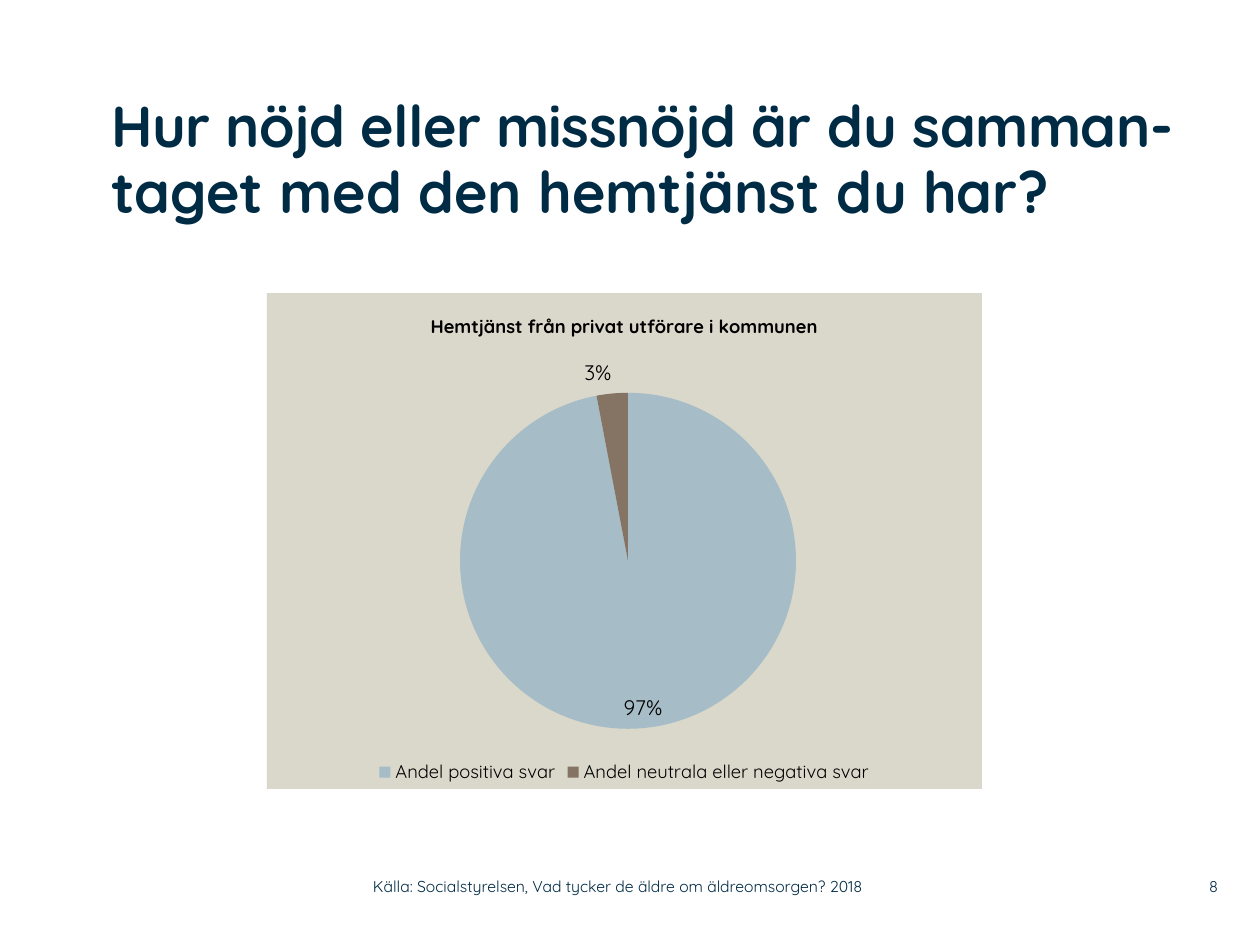
"""Build a slide with a pie chart of satisfaction with home care."""
from lxml.etree import SubElement
from pptx import Presentation
from pptx.chart.data import CategoryChartData
from pptx.dml.color import RGBColor
from pptx.enum.chart import XL_CHART_TYPE as ChartType
from pptx.enum.chart import XL_LABEL_POSITION as LabelPosition
from pptx.enum.chart import XL_LEGEND_POSITION as LegendPosition
from pptx.enum.text import MSO_ANCHOR as Anchor
from pptx.enum.text import PP_ALIGN as Align
from pptx.oxml.ns import qn
from pptx.util import Emu, Pt

COLORS = {"navy": "002B45", "black": "000000", "sand": "DAD7CB",
          "positive": "A6BCC6", "negative": "857363"}
FONT = "Quicksand"
SCALE = 914400 / 126


def px(*lengths):
    return [Emu(round(length * SCALE)) for length in lengths]


def style(font, size, color, bold=False):
    font.name = FONT
    font.size = Pt(size)
    font.bold = bold
    font.color.rgb = RGBColor.from_string(COLORS[color])


deck = Presentation()
deck.slide_width, deck.slide_height = px(1260, 945)
page = deck.slides.add_slide(deck.slide_layouts[5])

title = page.shapes.title
title.left, title.top, title.width, title.height = px(111, 95, 1126, 179)
frame = title.text_frame
frame.word_wrap = True
frame.vertical_anchor = Anchor.TOP
frame.margin_left = frame.margin_top = frame.margin_right = frame.margin_bottom = 0
para = frame.paragraphs[0]
para.alignment = Align.LEFT
para.line_spacing = 0.95
for text, spacing in [("Hur nöjd eller missnöjd är du samman-", -30),
                      ("taget med den hemtjänst du har?", 0)]:
    span = para.add_run()
    span.text = text
    style(span.font, 33, "navy", bold=True)
    span.font._element.set("spc", str(spacing))

chart_data = CategoryChartData()
chart_data.categories = ["Andel positiva svar", "Andel neutrala eller negativa svar"]
chart_data.add_series("Andel svar", [97, 3])
chart = page.shapes.add_chart(ChartType.PIE, *px(267, 293, 715, 496), chart_data).chart
style(chart.font, 18, "black")

chart.has_title = True
span = chart.chart_title.text_frame.paragraphs[0].add_run()
span.text = "Hemtjänst från privat utförare i kommunen"
style(span.font, 10.5, "black", bold=True)

chart.has_legend = True
chart.legend.position = LegendPosition.BOTTOM
chart.legend.include_in_layout = False
style(chart.legend.font, 10.5, "black")

plot = chart.plots[0]
plot.vary_by_categories = True
for index, color in enumerate(["positive", "negative"]):
    fill = plot.series[0].points[index].format.fill
    fill.solid()
    fill.fore_color.rgb = RGBColor.from_string(COLORS[color])
plot.has_data_labels = True
labels = plot.data_labels
labels.show_percentage = True
labels.show_value = False
labels.number_format = "0%"
labels.number_format_is_linked = False
labels.position = LabelPosition.BEST_FIT
style(labels.font, 12, "black")

plot_area = chart._chartSpace.chart.plotArea
layout = plot_area.find(qn("c:layout"))
if layout is None:
    layout = SubElement(plot_area, qn("c:layout"))
    plot_area.insert(0, layout)
manual = SubElement(layout, qn("c:manualLayout"))
for tag, value in [("layoutTarget", "inner"), ("xMode", "edge"), ("yMode", "edge"),
                   ("x", 0.27), ("y", 0.2), ("w", 0.47), ("h", 0.68)]:
    SubElement(manual, qn(f"c:{tag}")).set("val", str(value))

chart_fill = SubElement(chart._chartSpace, qn("c:spPr"))
solid = SubElement(chart_fill, qn("a:solidFill"))
SubElement(solid, qn("a:srgbClr")).set("val", COLORS["sand"])
SubElement(SubElement(chart_fill, qn("a:ln")), qn("a:noFill"))
chart._chartSpace.chart.addnext(chart_fill)

for text, left, width, alignment in [
        ("Källa: Socialstyrelsen, Vad tycker de äldre om äldreomsorgen? 2018",
         373, 558, Align.LEFT),
        ("8", 1159, 59, Align.RIGHT)]:
    box = page.shapes.add_textbox(*px(left, 868, width, 37))
    frame = box.text_frame
    frame.word_wrap = True
    frame.vertical_anchor = Anchor.MIDDLE
    frame.margin_left = frame.margin_top = frame.margin_right = frame.margin_bottom = 0
    para = frame.paragraphs[0]
    para.alignment = alignment
    span = para.add_run()
    span.text = text
    style(span.font, 9, "navy")

deck.save("out.pptx")
